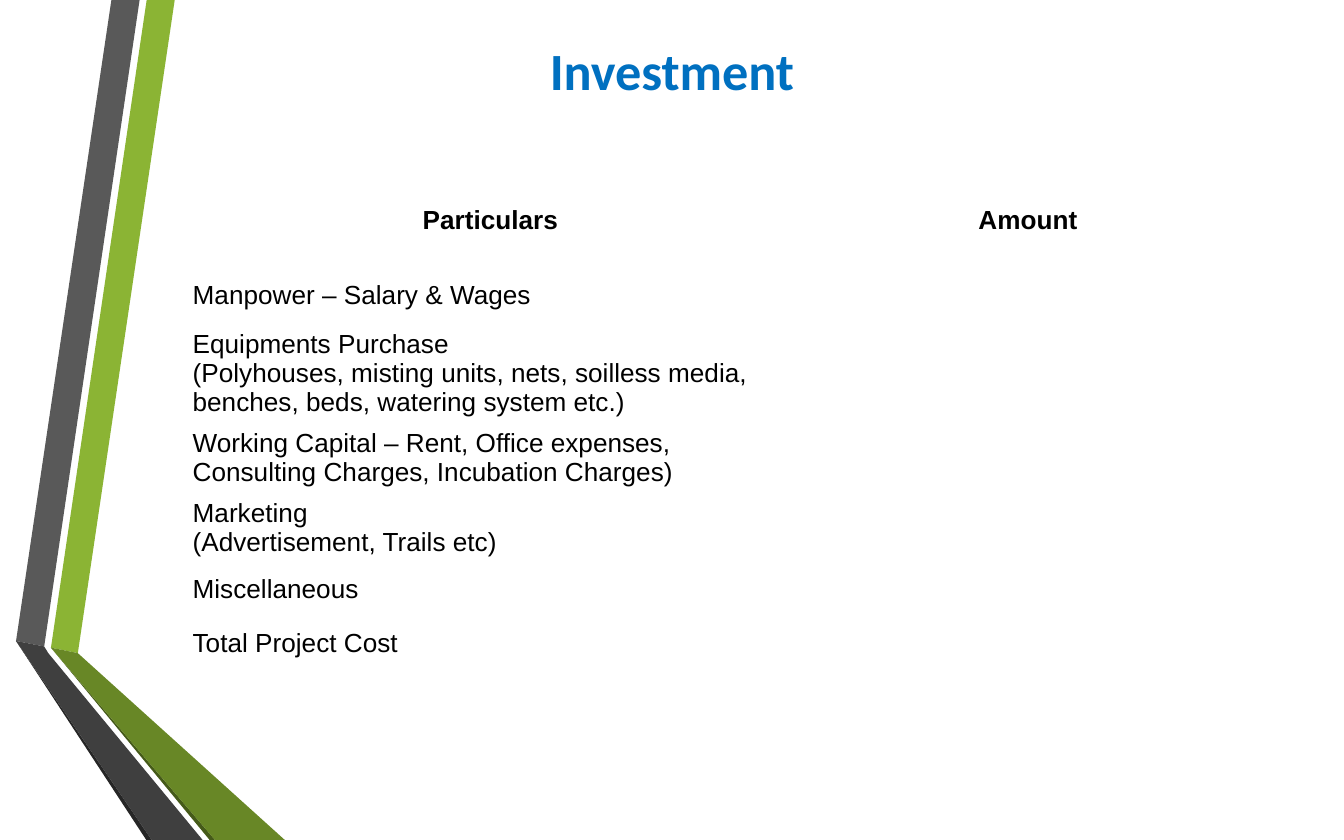
from dataclasses import dataclass

import pptx
import pptx.dml.color
import pptx.enum.text
import pptx.util

Pt = pptx.util.Pt
ANCHOR = pptx.enum.text.MSO_ANCHOR
ALIGN = pptx.enum.text.PP_ALIGN


@dataclass(frozen=True)
class Theme:
    title_font: str = "Calibri"
    body_font: str = "Arial"
    title_size: float = 28
    body_size: float = 14
    title: str = "0070C0"
    text: str = "000000"
    green: str = "8BB434"
    green_dark: str = "688726"
    green_edge: str = "455A19"
    gray: str = "595959"
    gray_dark: str = "3F3F3F"
    gray_edge: str = "262626"


THEME = Theme()

# Bends of the ribbons, relative to the box that holds them
GRAY_LEFT, GRAY_RIGHT = (0, 343.4), (15.1, 346.3)
GREEN_LEFT, GREEN_RIGHT = (18.7, 347), (33.1, 349.9)
RIBBONS = [
    (THEME.green, [GREEN_LEFT, GREEN_RIGHT, (85, 0), (70, 0)]),
    (THEME.gray, [GRAY_LEFT, GRAY_RIGHT, (66.2, 0), (51.1, 0)]),
    (THEME.gray_edge, [GRAY_LEFT, (69.8, 450), (72.7, 450)]),
    (THEME.green_edge, [GREEN_LEFT, (103.7, 450), (106.6, 450)]),
    (THEME.green_dark, [GREEN_LEFT, (106.6, 450), (144, 450), GREEN_RIGHT]),
    (THEME.gray_dark, [GRAY_LEFT, (72.7, 450), (100, 450), (17.3, 349.9), GRAY_RIGHT]),
]

HEADERS = ["Particulars", "Amount"]
COLUMN_WIDTHS = [333.4, 242.6]
# Height of each row and the paragraphs of its first cell
ITEMS = [
    (30.2, ["Manpower – Salary & Wages"]),
    (36, ["Equipments Purchase",
          "(Polyhouses, misting units, nets, soilless media, benches, beds, "
          "watering system etc.)"]),
    (35.3, ["Working Capital – Rent, Office expenses, Consulting Charges, "
            "Incubation Charges)"]),
    (28.8, ["Marketing", "(Advertisement, Trails etc)"]),
    (27.4, ["Miscellaneous"]),
    (30.2, ["Total Project Cost"]),
]
HEADER_HEIGHT = 36


def rgb(value):
    return pptx.dml.color.RGBColor.from_string(value)


def add_run(paragraph, text, font_name, size, color, bold=False):
    run = paragraph.add_run()
    run.text = text
    run.font.name = font_name
    run.font.size = Pt(size)
    run.font.bold = bold
    run.font.color.rgb = rgb(color)


def add_ribbons(slide, left, top):
    """Draw the two folded ribbons from the top left corner of their box."""
    for color, points in RIBBONS:
        corners = [(Pt(left + x), Pt(top + y)) for x, y in points]
        builder = slide.shapes.build_freeform(*corners[0], scale=1.0)
        builder.add_line_segments(corners[1:], close=True)
        shape = builder.convert_to_shape()
        shape.shadow.inherit = False
        shape.fill.solid()
        shape.fill.fore_color.rgb = rgb(color)
        shape.line.fill.background()


def add_title(slide, left, top, width, height):
    box = slide.shapes.add_textbox(Pt(left), Pt(top), Pt(width), Pt(height))
    frame = box.text_frame
    frame.word_wrap = True
    frame.vertical_anchor = ANCHOR.MIDDLE
    paragraph = frame.paragraphs[0]
    paragraph.alignment = ALIGN.CENTER
    add_run(paragraph, "Investment", THEME.title_font, THEME.title_size, THEME.title, True)


def fill_cell(cell, lines, header=False):
    cell.vertical_anchor = ANCHOR.TOP if header else ANCHOR.MIDDLE
    for index, line in enumerate(lines):
        frame = cell.text_frame
        paragraph = frame.add_paragraph() if index else frame.paragraphs[0]
        paragraph.alignment = ALIGN.CENTER if header else ALIGN.LEFT
        add_run(paragraph, line, THEME.body_font, THEME.body_size, THEME.text, header)


def add_investment_table(slide, left, top):
    heights = [HEADER_HEIGHT] + [height for height, _ in ITEMS]
    frame = slide.shapes.add_table(
        len(heights), len(HEADERS), Pt(left), Pt(top),
        Pt(sum(COLUMN_WIDTHS)), Pt(sum(heights)))
    table = frame.table
    table.first_row = False
    table.horz_banding = False
    for column, width in zip(table.columns, COLUMN_WIDTHS):
        column.width = Pt(width)
    for row, height in zip(table.rows, heights):
        row.height = Pt(height)
    for cell in table.iter_cells():
        cell.fill.background()
        cell.margin_left = cell.margin_right = Pt(7.2)
        cell.margin_top = cell.margin_bottom = Pt(3)
    for index, header in enumerate(HEADERS):
        fill_cell(table.cell(0, index), [header], header=True)
    for index, (_, lines) in enumerate(ITEMS, start=1):
        fill_cell(table.cell(index, 0), lines)


def main():
    presentation = pptx.Presentation()
    presentation.slide_width = Pt(720)
    presentation.slide_height = Pt(450)
    slide = presentation.slides.add_slide(presentation.slide_layouts[6])
    add_ribbons(slide, 8.6, 0)
    add_investment_table(slide, 96, 107.3)
    add_title(slide, 36, 0, 648, 75)
    presentation.save("out.pptx")


if __name__ == "__main__":
    main()
